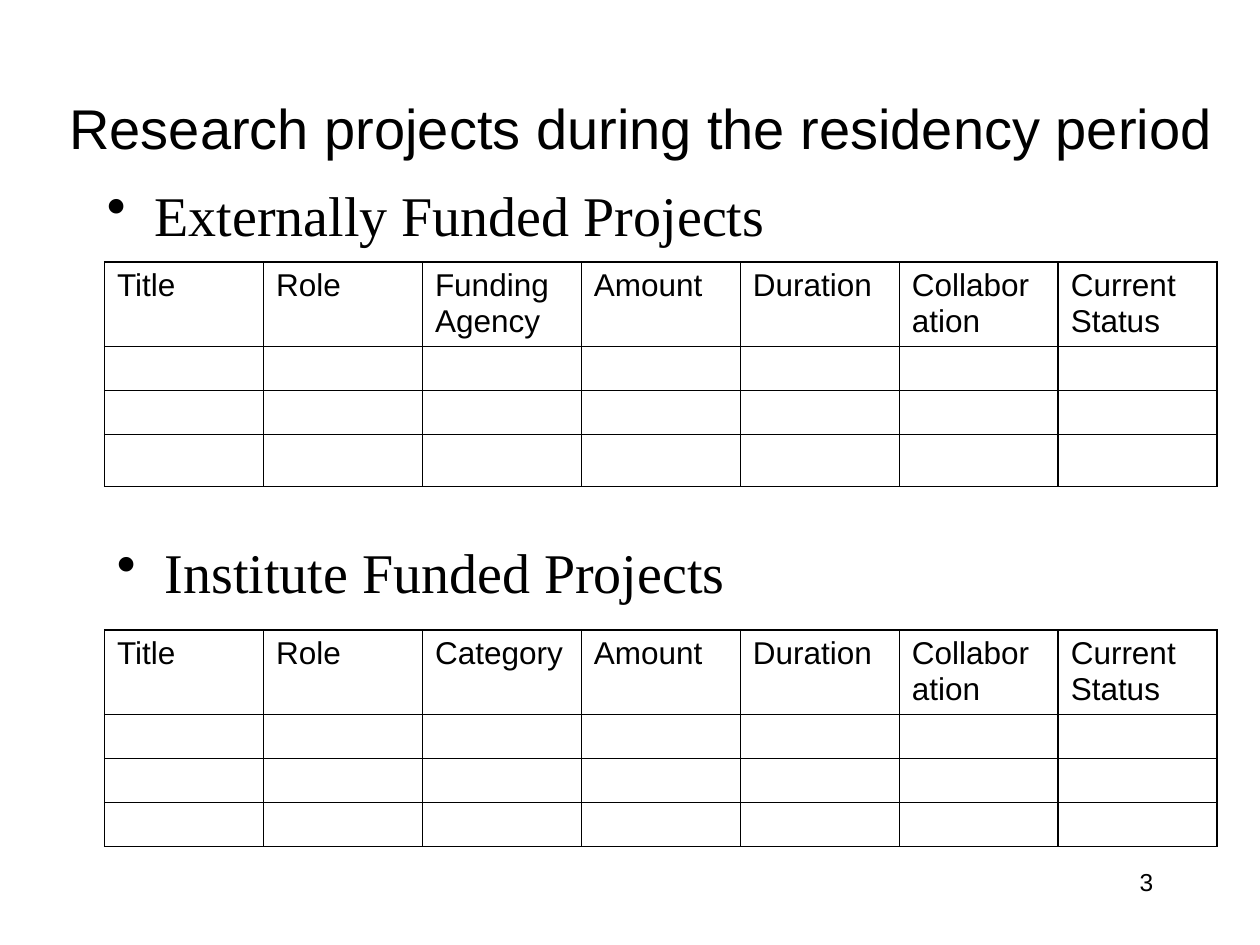
from dataclasses import dataclass

from lxml import etree
from pptx import Presentation
from pptx.dml.color import RGBColor
from pptx.enum.text import MSO_ANCHOR, PP_ALIGN
from pptx.oxml.ns import qn
from pptx.util import Inches, Pt

LEFT, CENTER, RIGHT = PP_ALIGN.LEFT, PP_ALIGN.CENTER, PP_ALIGN.RIGHT
TOP, MIDDLE = MSO_ANCHOR.TOP, MSO_ANCHOR.MIDDLE


@dataclass(frozen=True)
class Theme:
    ink: str = "000000"
    sans: str = "Arial"
    serif: str = "Times New Roman"
    heading_size: int = 32
    table_size: int = 18
    number_size: int = 14
    border_width: int = 1


@dataclass(frozen=True)
class Label:
    text: str
    left: float
    top: float
    width: float
    height: float
    font: str
    size: int
    align: PP_ALIGN = LEFT
    anchor: MSO_ANCHOR = TOP
    bulleted: bool = False


@dataclass(frozen=True)
class ProjectTable:
    top: float
    third_heading: str
    row_heights: tuple[float, ...]


THEME = Theme()
TABLE_LEFT, TABLE_WIDTH = 0.83, 8.83
BULLET_INDENT = 0.38
EMPTY_ROW_MARGIN = 0.02

LABELS = (
    Label("Research projects during the residency period", 0.19, 0.51, 9.8, 1,
          THEME.sans, THEME.heading_size, CENTER, MIDDLE),
    Label("Externally Funded Projects", 0.75, 1.38, 8.5, 0.67,
          THEME.serif, THEME.heading_size, bulleted=True),
    Label("Institute Funded Projects", 0.83, 4.22, 8.5, 0.67,
          THEME.serif, THEME.heading_size, bulleted=True),
    Label("3", 7.17, 6.83, 2.08, 0.5, THEME.sans, THEME.number_size, RIGHT),
)
TABLES = (
    ProjectTable(2.08, "Funding Agency", (0.66, 0.35, 0.35, 0.41)),
    ProjectTable(5, "Category", (0.66, 0.35, 0.35, 0.35)),
)


def format_runs(paragraph, font: str, size: int) -> None:
    for run in paragraph.runs:
        run.font.name = font
        run.font.size = Pt(size)
        run.font.color.rgb = RGBColor.from_string(THEME.ink)


def add_bullet(paragraph) -> None:
    properties = paragraph._p.get_or_add_pPr()
    properties.set("marL", str(Inches(BULLET_INDENT)))
    properties.set("indent", str(-Inches(BULLET_INDENT)))
    etree.SubElement(properties, qn("a:buChar"), char="•")


def add_label(slide, label: Label) -> None:
    shape = slide.shapes.add_textbox(Inches(label.left), Inches(label.top),
                                     Inches(label.width), Inches(label.height))
    text_frame = shape.text_frame
    text_frame.word_wrap = True
    text_frame.vertical_anchor = label.anchor
    text_frame.text = label.text
    paragraph = text_frame.paragraphs[0]
    paragraph.alignment = label.align
    if label.bulleted:
        add_bullet(paragraph)
    format_runs(paragraph, label.font, label.size)


def add_borders(cell) -> None:
    properties = cell._tc.get_or_add_tcPr()
    for position, side in enumerate(("a:lnL", "a:lnR", "a:lnT", "a:lnB")):
        line = etree.Element(qn(side), w=str(Pt(THEME.border_width)))
        fill = etree.SubElement(line, qn("a:solidFill"))
        etree.SubElement(fill, qn("a:srgbClr"), val=THEME.ink)
        properties.insert(position, line)


def add_project_table(slide, project_table: ProjectTable) -> None:
    headings = ("Title", "Role", project_table.third_heading, "Amount",
                "Duration", "Collaboration", "Current Status")
    heights = project_table.row_heights
    table = slide.shapes.add_table(
        len(heights), len(headings), Inches(TABLE_LEFT), Inches(project_table.top),
        Inches(TABLE_WIDTH), Inches(sum(heights))).table
    table.first_row = False
    table.horz_banding = False
    for row, height in zip(table.rows, heights):
        row.height = Inches(height)
    for cell in table.iter_cells():
        cell.fill.background()
        cell.margin_bottom = Inches(EMPTY_ROW_MARGIN)
        cell.margin_top = Inches(EMPTY_ROW_MARGIN)
        add_borders(cell)
    for column, heading in enumerate(headings):
        cell = table.cell(0, column)
        cell.margin_top = Inches(0.05)
        cell.text_frame.text = heading
        format_runs(cell.text_frame.paragraphs[0], THEME.sans, THEME.table_size)


def main() -> None:
    presentation = Presentation()
    presentation.slide_width = Inches(10)
    presentation.slide_height = Inches(7.5)
    slide = presentation.slides.add_slide(presentation.slide_layouts[6])
    for label in LABELS:
        add_label(slide, label)
    for project_table in TABLES:
        add_project_table(slide, project_table)
    presentation.save("out.pptx")


if __name__ == "__main__":
    main()
